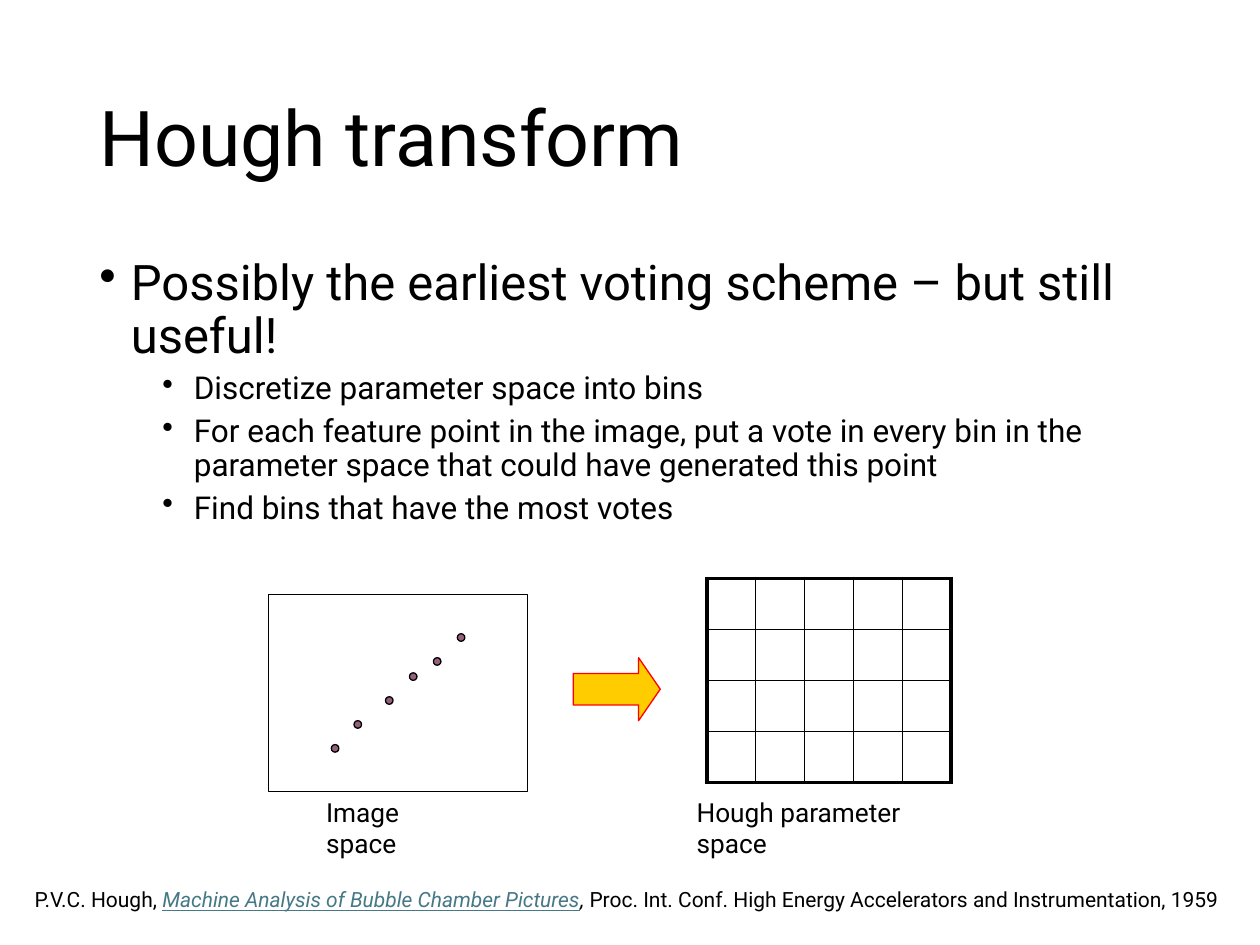
import pptx
import pptx.util
import pptx.dml.color
import pptx.enum.shapes
import pptx.enum.text
import pptx.oxml.ns
import lxml.etree

Inches = pptx.util.Inches
Pt = pptx.util.Pt
Shape = pptx.enum.shapes.MSO_SHAPE
Align = pptx.enum.text.PP_ALIGN
Anchor = pptx.enum.text.MSO_ANCHOR
Fit = pptx.enum.text.MSO_AUTO_SIZE
FONT = "Roboto"
BLACK = "000000"


def tint(code):
    return pptx.dml.color.RGBColor.from_string(code)


def place(box):
    return [Inches(side) for side in box]


def add_run(para, text, size, color=BLACK, slant=False, under=False):
    run = para.add_run()
    run.text = text
    font = run.font
    font.name, font.size = FONT, Pt(size)
    font.color.rgb = tint(color)
    font.italic, font.underline = slant, under


def add_text(slide, box):
    frame = slide.shapes.add_textbox(*place(box)).text_frame
    frame.word_wrap = True
    return frame


def add_form(slide, kind, box, line, fill=None):
    form = slide.shapes.add_shape(kind, *place(box))
    form.shadow.inherit = False
    if fill:
        form.fill.solid()
        form.fill.fore_color.rgb = tint(fill)
    else:
        form.fill.background()
    form.line.color.rgb = tint(line)
    form.line.width = Pt(0.75)
    return form


def add_title(slide, box, text):
    title = slide.shapes.title
    title.left, title.top, title.width, title.height = place(box)
    frame = title.text_frame
    frame.auto_size = Fit.NONE
    frame.vertical_anchor = Anchor.MIDDLE
    para = frame.paragraphs[0]
    para.alignment = Align.LEFT
    para.line_spacing = 0.9
    add_run(para, text, 44)


def add_points(slide, box, points):
    frame = add_text(slide, box)
    for index, (level, text) in enumerate(points):
        para = frame.add_paragraph() if index else frame.paragraphs[0]
        para.level = level
        props = para._p.get_or_add_pPr()
        props.set("marL", str(Inches(0.25 + 0.5 * level)))
        props.set("indent", str(Inches(-0.25)))
        mark = lxml.etree.SubElement(props, pptx.oxml.ns.qn("a:buChar"))
        mark.set("char", "•")
        para.line_spacing = 0.9
        if index:
            para.space_before = Pt(5)
        add_run(para, text, 18 if level else 28)


def add_label(slide, box, text):
    frame = add_text(slide, box)
    frame.margin_right = Inches(0.4)
    add_run(frame.paragraphs[0], text, 15)


def add_plot(slide, box):
    left, top = box[:2]
    add_form(slide, Shape.RECTANGLE, box, BLACK)
    dots = [(0.5, 1.19), (0.68, 1), (0.93, 0.81),
            (1.12, 0.62), (1.31, 0.5), (1.5, 0.31)]
    for x, y in dots:
        spot = (left + x, top + y, 0.06, 0.06)
        add_form(slide, Shape.OVAL, spot, BLACK, "96607D")
    add_label(slide, (left + 0.36, top + 1.55, 1.35, 0.35), "Image space")


def add_arrow(slide, box):
    arrow = add_form(slide, Shape.RIGHT_ARROW, box, "FF0000", "FFCC00")
    arrow.adjustments[0] = 0.5
    arrow.adjustments[1] = 0.344


def add_edge(cell, side, width):
    props = cell._tc.get_or_add_tcPr()
    edge = lxml.etree.SubElement(props, pptx.oxml.ns.qn("a:ln" + side))
    edge.set("w", str(Pt(width)))
    fill = lxml.etree.SubElement(edge, pptx.oxml.ns.qn("a:solidFill"))
    color = lxml.etree.SubElement(fill, pptx.oxml.ns.qn("a:srgbClr"))
    color.set("val", BLACK)


def add_grid(slide, box, rows, cols):
    left, top, width, height = box
    table = slide.shapes.add_table(rows, cols, *place(box)).table
    table.first_row = table.horz_banding = False
    for row in range(rows):
        for col in range(cols):
            cell = table.cell(row, col)
            cell.margin_top = cell.margin_bottom = 0
            rims = {"L": col == 0, "R": col == cols - 1,
                    "T": row == 0, "B": row == rows - 1}
            for side, rim in rims.items():
                add_edge(cell, side, 2.25 if rim else 1)
            cell.fill.background()
    add_label(slide, (left - 0.18, top + 1.68, 2.38, 0.35),
              "Hough parameter space")


def add_source(slide, box):
    frame = add_text(slide, box)
    frame.vertical_anchor = Anchor.MIDDLE
    para = frame.paragraphs[0]
    para.alignment = Align.CENTER
    add_run(para, "P.V.C. Hough, ", 12)
    add_run(para, "Machine Analysis of Bubble Chamber Pictures", 12,
            "467886", True, True)
    add_run(para, ",", 12, slant=True)
    add_run(para, " Proc. Int. Conf. High Energy Accelerators and "
            "Instrumentation, 1959", 12)


def main():
    deck = pptx.Presentation()
    deck.slide_width, deck.slide_height = Inches(10), Inches(7.5)
    slide = deck.slides.add_slide(deck.slide_layouts[5])
    add_title(slide, (0.69, 0.4, 8.62, 1.45), "Hough transform")
    add_points(slide, (0.69, 2, 8.62, 4.76), [
        (0, "Possibly the earliest voting scheme – but still useful!"),
        (1, "Discretize parameter space into bins"),
        (1, "For each feature point in the image, put a vote in every bin "
            "in the parameter space that could have generated this point"),
        (1, "Find bins that have the most votes"),
    ])
    add_source(slide, (0, 6.99, 9.95, 0.3))
    add_plot(slide, (2.13, 4.72, 2.06, 1.56))
    add_arrow(slide, (4.55, 5.22, 0.69, 0.5))
    add_grid(slide, (5.61, 4.59, 1.94, 1.62), 4, 5)
    deck.save("out.pptx")


if __name__ == "__main__":
    main()
